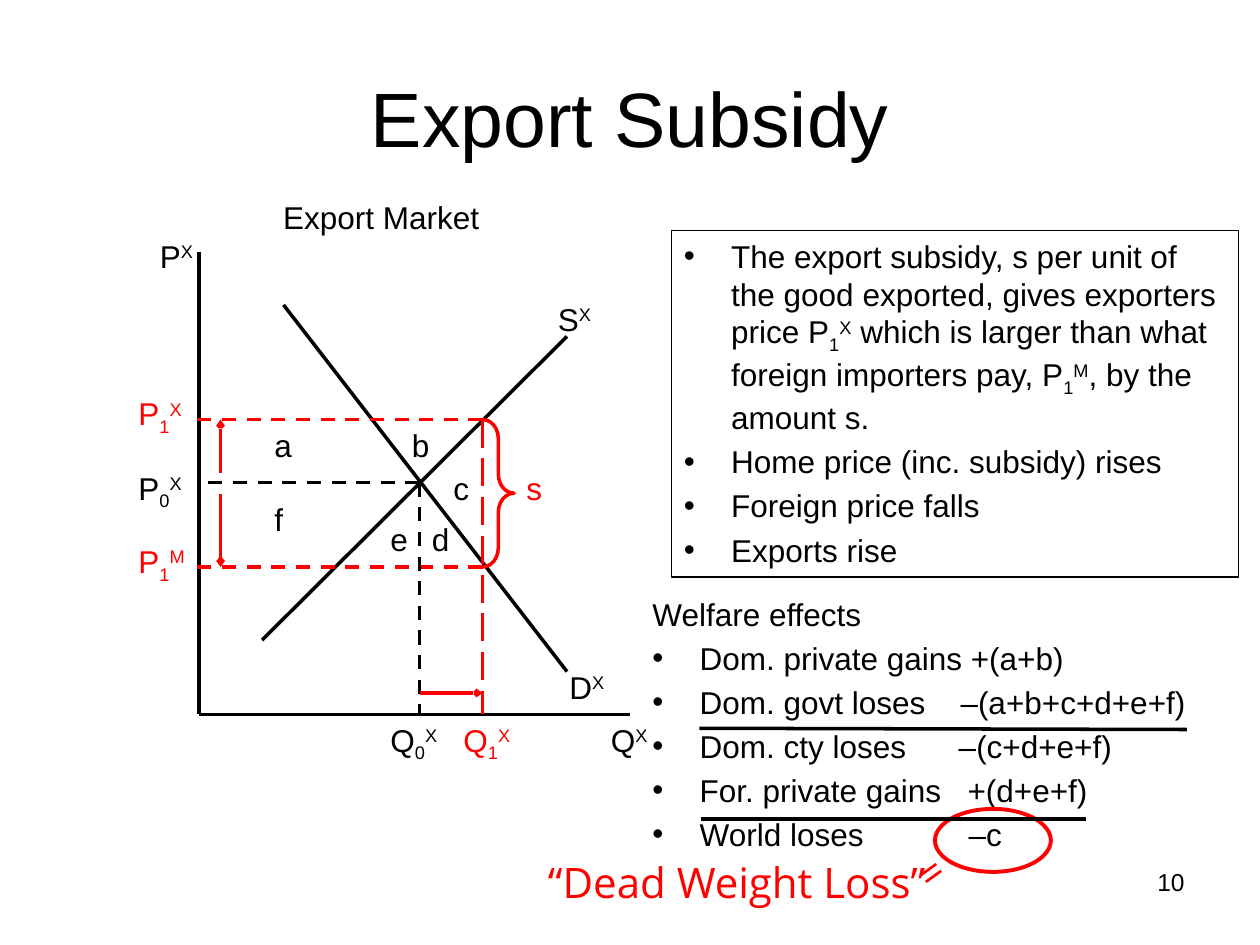
from pptx import Presentation
from pptx.dml.color import RGBColor
from pptx.enum.dml import MSO_LINE
from pptx.enum.shapes import MSO_CONNECTOR, MSO_SHAPE
from pptx.enum.text import MSO_ANCHOR, PP_ALIGN
from pptx.oxml.ns import qn
from pptx.util import Inches, Pt
from lxml.etree import SubElement

BLACK = RGBColor(0, 0, 0)
RED = RGBColor(255, 0, 0)
BASES = {"_": "-25000", "^": "30000"}
HANG = 0.375


def add_run(para, text, size, color, font, **attrs):
    run = para.add_run()
    run.text = text
    for key, value in {"size": Pt(size), "name": font}.items():
        setattr(run.font, key, value)
    run.font.color.rgb = color
    for key, value in attrs.items():
        run.font._element.set(key, value)


def add_rich(para, text, size, color, font):
    """Write text in which _ lowers and ^ raises the next character."""
    plain, mark = "", None
    for char in text:
        if mark:
            add_run(para, char, size, color, font, baseline=BASES[mark])
            mark = None
        elif char in BASES:
            if plain:
                add_run(para, plain, size, color, font)
            plain, mark = "", char
        else:
            plain += char
    if plain:
        add_run(para, plain, size, color, font)


def add_text(slide, box, text, size=18, color=BLACK, font="Arial",
             align=PP_ALIGN.LEFT, anchor=MSO_ANCHOR.TOP):
    shape = slide.shapes.add_textbox(*map(Inches, box))
    frame = shape.text_frame
    for key, value in {"word_wrap": True, "vertical_anchor": anchor}.items():
        setattr(frame, key, value)
    para = frame.paragraphs[0]
    para.alignment = align
    if text:
        add_rich(para, text, size, color, font)
    return shape


def add_line(slide, start, end, color=BLACK, dash=None, arrow=False):
    line = slide.shapes.add_connector(
        MSO_CONNECTOR.STRAIGHT, *map(Inches, (*start, *end)))
    line.line.color.rgb = color
    line.line.width = Pt(2)
    if dash:
        line.line.dash_style = dash
    if arrow:
        SubElement(line.line._get_or_add_ln(), qn("a:tailEnd"),
                   type="arrow", w="sm", len="sm")
    SubElement(line._element.spPr, qn("a:effectLst"))


def add_mark(slide, kind, box, width):
    """Add a red outline without fill."""
    shape = slide.shapes.add_shape(kind, *map(Inches, box))
    shape.shadow.inherit = False
    shape.fill.background()
    shape.line.color.rgb = RED
    shape.line.width = Pt(width)
    return shape


def set_bullet(para):
    props = para._p.get_or_add_pPr()
    props.set("marL", str(Inches(HANG)))
    props.set("indent", str(-Inches(HANG)))
    SubElement(props, qn("a:buFont"), typeface="Arial")
    SubElement(props, qn("a:buChar"), char="•")


def add_list(slide, box, items, heading=None):
    """Add bullets; an item is text, or label, amount and gap in points."""
    shape = add_text(slide, box, heading)
    frame = shape.text_frame
    for i, item in enumerate(items):
        first = i == 0 and not heading
        para = frame.paragraphs[0] if first else frame.add_paragraph()
        if not first:
            para.space_before = Pt(3.6)
        set_bullet(para)
        if isinstance(item, str):
            add_rich(para, item, 18, BLACK, "Arial")
        else:
            label, amount, gap = item
            add_run(para, label, 18, BLACK, "Arial")
            add_run(para, " ", 18, BLACK, "Arial", spc=str(gap * 100))
            add_run(para, amount, 18, BLACK, "Arial")
    return shape


def draw_market(slide, left, top):
    """Draw the diagram with the top of the price axis at left, top."""
    def at(x, y):
        return left + x, top + y

    base, mid, right = 3.67, 1.75, 2.25
    high, even, low = 1.33, 1.83, 2.5
    dash, long = MSO_LINE.DASH, MSO_LINE.LONG_DASH
    for start, end, color, style, arrow in (
        ((0, base), (3.42, base), BLACK, None, False),
        ((0, base), (0, 0), BLACK, None, False),
        ((2.92, 0.67), (0.5, 3.08), BLACK, None, False),
        ((2.92, 3.33), (0.67, 0.42), BLACK, None, False),
        ((mid, even), (0, even), BLACK, dash, False),
        ((right, high), (-0.08, high), RED, dash, False),
        ((right, high), (right, base), RED, long, False),
        ((right, low), (-0.08, low), RED, dash, False),
        ((mid, even), (mid, base), BLACK, dash, False),
        ((mid, 3.5), (right, 3.5), RED, None, True),
        ((0.17, 1.75), (0.17, high), RED, None, True),
        ((0.17, 1.92), (0.17, low), RED, None, True),
    ):
        add_line(slide, at(*start), at(*end), color, style, arrow)

    brace = add_mark(slide, MSO_SHAPE.RIGHT_BRACE,
                     (*at(right, high), 0.25, low - high), 2)
    brace.adjustments[0] = 0.604
    brace.adjustments[1] = 0.5

    for text, x, y, width, color in (
        ("P^X", -0.41, -0.17, 0.75, BLACK),
        ("Q^X", 3.17, base, 0.75, BLACK),
        ("P_0^X", -0.58, 1.67, 0.67, BLACK),
        ("P_1^X", -0.58, 1.08, 0.67, RED),
        ("P_1^M", -0.58, 2.25, 0.67, RED),
        ("Q_0^X", 1.42, base, 0.67, BLACK),
        ("Q_1^X", 2, base, 0.67, RED),
        ("D^X", 2.84, 3.25, 0.5, BLACK),
        ("S^X", 2.75, 0.33, 0.5, BLACK),
        ("s", 2.5, 1.67, 0.67, RED),
        ("a", 0.5, 1.33, 0.33, BLACK),
        ("f", 0.5, 1.92, 0.33, BLACK),
        ("b", 1.59, 1.33, 0.33, BLACK),
        ("c", 1.92, 1.67, 0.33, BLACK),
        ("d", 1.75, 2.08, 0.33, BLACK),
        ("e", 1.42, 2.08, 0.33, BLACK),
    ):
        add_text(slide, (*at(x, y), width, 0.4), text, color=color)
    add_text(slide, (*at(0.05, -0.48), 2.79, 0.4), "Export Market",
             align=PP_ALIGN.CENTER)


def draw_notes(slide, box):
    shape = add_list(slide, box, (
        "The export subsidy, s per unit of the good exported, gives exporters "
        "price P_1^X which is larger than what foreign importers pay, P_1^M, "
        "by the amount s.",
        "Home price (inc. subsidy) rises",
        "Foreign price falls",
        "Exports rise",
    ))
    shape.line.color.rgb = BLACK
    shape.line.width = Pt(0.75)


def draw_welfare(slide, left, top):
    add_list(slide, (left, top, 4.5, 2.25), (
        "Dom. private gains +(a+b)",
        ("Dom. govt loses", "–(a+b+c+d+e+f)", 15),
        ("Dom. cty loses", "–(c+d+e+f)", 25),
        ("For. private gains", "+(d+e+f)", 10),
        ("World loses", "–c", 55),
    ), "Welfare effects")
    add_mark(slide, MSO_SHAPE.OVAL, (left + 2.34, top + 1.75, 0.92, 0.5), 2.25)
    add_text(slide, (left - 0.83, top + 2.08, 3.55, 0.5),
             "“Dead Weight Loss”", 24, RED, "Open Sans")
    equal = add_text(slide, (left + 2.11, top + 1.99, 0.42, 0.5),
                     "=", 24, RED, "Open Sans")
    equal.rotation = 324.2
    add_line(slide, (left + 0.47, top + 1.11), (left + 4.34, top + 1.12))
    add_line(slide, (left + 0.48, top + 1.83), (left + 3.54, top + 1.83))


def main():
    deck = Presentation()
    deck.slide_width, deck.slide_height = Inches(10), Inches(7.5)
    slide = deck.slides.add_slide(deck.slide_layouts[6])
    add_text(slide, (0.5, 0.3, 9, 1.25), "Export Subsidy", 44,
             align=PP_ALIGN.CENTER, anchor=MSO_ANCHOR.MIDDLE)
    add_text(slide, (7.17, 6.83, 2.33, 0.52), "10", 14, align=PP_ALIGN.RIGHT)
    draw_market(slide, 1.58, 2)
    draw_notes(slide, (5.33, 1.83, 4.5, 2.75))
    draw_welfare(slide, 5.08, 4.67)
    deck.save("out.pptx")


if __name__ == "__main__":
    main()
